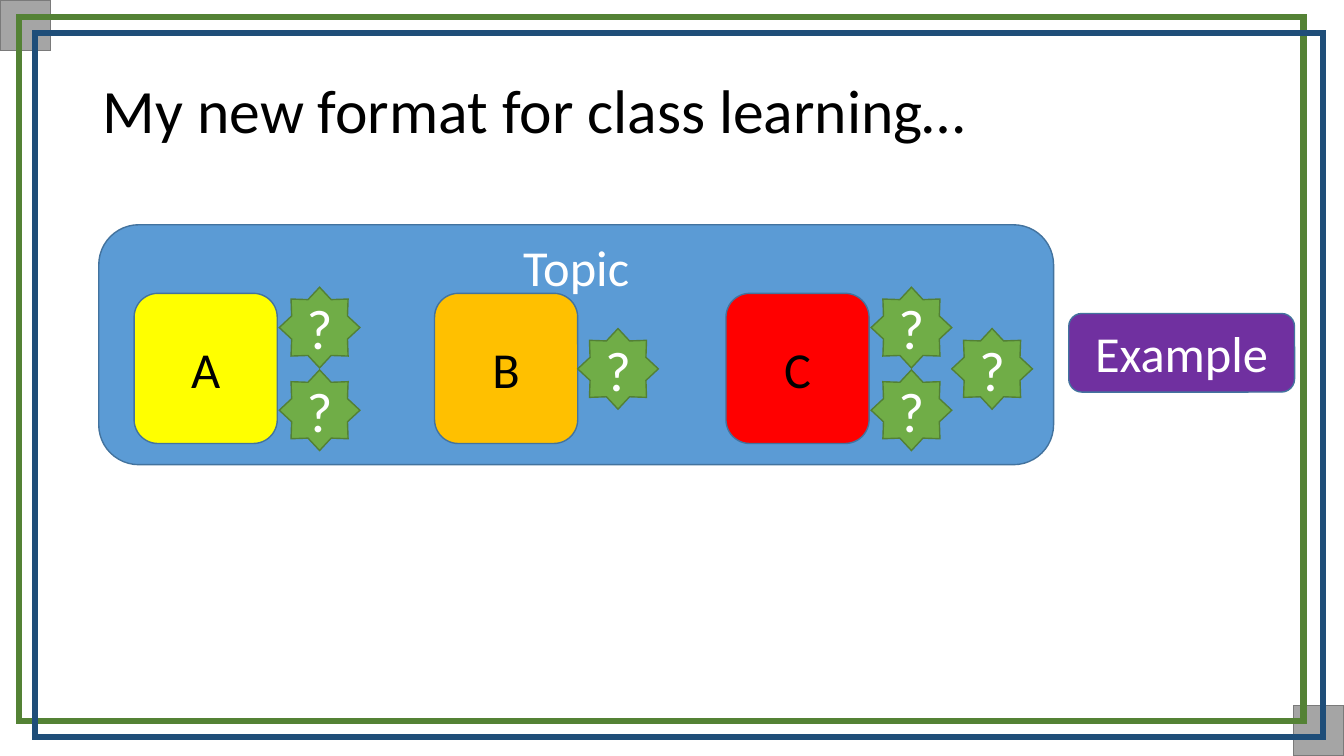
from lxml import etree
from pptx import Presentation
from pptx.dml.color import RGBColor
from pptx.enum import shapes, text
from pptx.oxml import ns
from pptx.util import Inches, Pt

WHITE = RGBColor(0xFF, 0xFF, 0xFF)
BLACK = RGBColor(0x00, 0x00, 0x00)
GREY = RGBColor(0xA5, 0xA5, 0xA5)
DARK_GREY = RGBColor(0x7A, 0x7A, 0x7A)
FRAME_GREEN = RGBColor(0x54, 0x82, 0x35)
FRAME_BLUE = RGBColor(0x1F, 0x4E, 0x79)
BLUE = RGBColor(0x5B, 0x9B, 0xD5)
OUTLINE_BLUE = RGBColor(0x43, 0x73, 0x9E)
PURPLE = RGBColor(0x70, 0x30, 0xA0)
YELLOW = RGBColor(0xFF, 0xFF, 0x00)
ORANGE = RGBColor(0xFF, 0xC0, 0x00)
RED = RGBColor(0xFF, 0x00, 0x00)
GREEN = RGBColor(0x70, 0xAD, 0x47)
OUTLINE_GREEN = RGBColor(0x53, 0x80, 0x35)

RECTANGLE = shapes.MSO_SHAPE.RECTANGLE
ROUNDED = shapes.MSO_SHAPE.ROUNDED_RECTANGLE
STAR = shapes.MSO_SHAPE.STAR_8_POINT
CENTER = text.PP_ALIGN.CENTER
MIDDLE = text.MSO_ANCHOR.MIDDLE

STAR_SIZE = 0.8
STAR_TOPS = {"upper": 2.85, "middle": 3.26, "lower": 3.67}


def write_text(shape, words, size=36, color=WHITE, align=CENTER,
               anchor=MIDDLE, side=0.1, edge=0.05):
    frame = shape.text_frame
    frame.word_wrap = True
    frame.vertical_anchor = anchor
    frame.margin_left = frame.margin_right = Inches(side)
    frame.margin_top = frame.margin_bottom = Inches(edge)
    paragraph = frame.paragraphs[0]
    paragraph.alignment = align
    run = paragraph.add_run()
    run.text = words
    run.font.name = "Calibri"
    run.font.size = Pt(size)
    run.font.color.rgb = color
    return paragraph


def add_shape(parent, kind, box, fill=None, line=OUTLINE_BLUE, width=1):
    """Add a preset shape; without a fill colour it is hollow."""
    shape = parent.shapes.add_shape(kind, *map(Inches, box))
    shape.shadow.inherit = False
    if fill is None:
        shape.fill.background()
    else:
        shape.fill.solid()
        shape.fill.fore_color.rgb = fill
    shape.line.color.rgb = line
    shape.line.width = Pt(width)
    outline = shape.element.spPr.find(ns.qn("a:ln"))
    etree.SubElement(outline, ns.qn("a:miter"), lim="800000")
    return shape


def add_border(slide):
    for left, top in ((0, 0), (12.83, 7)):
        add_shape(slide, RECTANGLE, (left, top, 0.5, 0.5), GREY, DARK_GREY)
    add_shape(slide, RECTANGLE, (0.19, 0.17, 12.74, 6.98),
              line=FRAME_GREEN, width=4.5)
    add_shape(slide, RECTANGLE, (0.35, 0.33, 12.77, 6.98),
              line=FRAME_BLUE, width=4.5)


def add_title(slide, words):
    title = slide.shapes.title
    title.left, title.top = Inches(0.92), Inches(0.4)
    title.width, title.height = Inches(11.5), Inches(1.45)
    paragraph = write_text(title, words, size=44, color=BLACK,
                           align=text.PP_ALIGN.LEFT)
    paragraph.line_spacing = 0.9


def add_subtopic(slide, letter, left, fill, stars):
    """Group a lettered box with its question stars, given as (left, level)."""
    group = slide.shapes.add_group_shape()
    box = add_shape(group, ROUNDED, (left, 2.91, 1.42, 1.49), fill)
    write_text(box, letter, color=BLACK)
    for star_left, level in stars:
        star = add_shape(group, STAR,
                         (star_left, STAR_TOPS[level], STAR_SIZE, STAR_SIZE),
                         GREEN, OUTLINE_GREEN)
        write_text(star, "?", size=40, side=0, edge=0)


def main():
    presentation = Presentation()
    presentation.slide_width = Inches(13.33)
    presentation.slide_height = Inches(7.5)
    slide = presentation.slides.add_slide(presentation.slide_layouts[5])

    add_border(slide)
    add_title(slide, "My new format for class learning…")
    topic = add_shape(slide, ROUNDED, (0.98, 2.23, 9.47, 2.38), BLUE)
    write_text(topic, "Topic", anchor=text.MSO_ANCHOR.TOP, edge=0)
    example = add_shape(slide, ROUNDED, (10.6, 3.11, 2.24, 0.78), PURPLE)
    write_text(example, "Example")

    add_subtopic(slide, "A", 1.33, YELLOW, [(2.77, "upper"), (2.77, "lower")])
    add_subtopic(slide, "B", 4.31, ORANGE, [(5.73, "middle")])
    add_subtopic(slide, "C", 7.2, RED,
                 [(8.64, "upper"), (8.64, "lower"), (9.44, "middle")])
    presentation.save("out.pptx")


if __name__ == "__main__":
    main()
